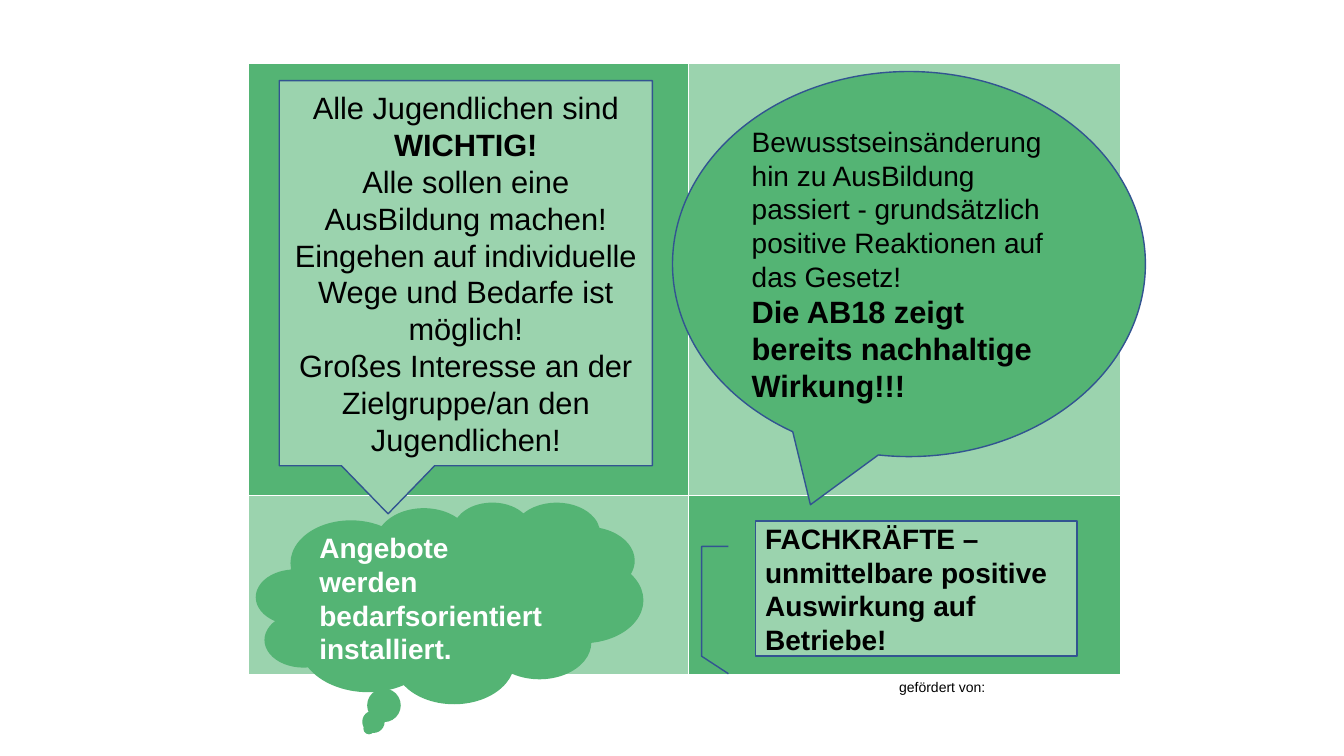
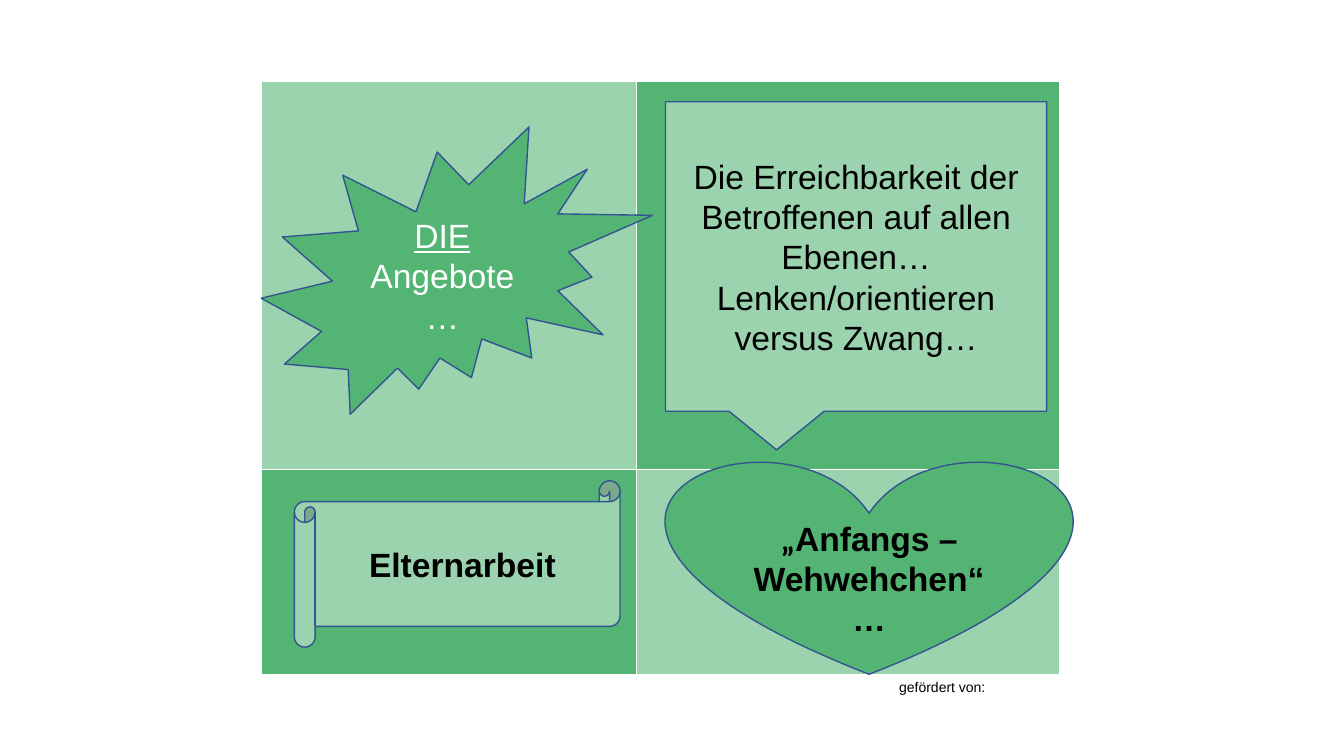
from pptx import Presentation
from pptx.dml.color import RGBColor
from pptx.enum.shapes import MSO_SHAPE
from pptx.enum.text import MSO_ANCHOR, PP_ALIGN
from pptx.util import Inches, Pt

GREEN = RGBColor(0x54, 0xB4, 0x74)
LIGHT = RGBColor(0x9B, 0xD3, 0xAE)
BLUE = RGBColor(0x32, 0x54, 0x91)
BLACK = RGBColor(0, 0, 0)
WHITE = RGBColor(0xFF, 0xFF, 0xFF)
FONT = "Arial"
LEFT, CENTER = PP_ALIGN.LEFT, PP_ALIGN.CENTER
MIDDLE = MSO_ANCHOR.MIDDLE
RECT_CALLOUT = MSO_SHAPE.RECTANGULAR_CALLOUT
OVAL_CALLOUT = MSO_SHAPE.OVAL_CALLOUT
CLOUD = MSO_SHAPE.CLOUD_CALLOUT
LINE_CALLOUT = MSO_SHAPE.LINE_CALLOUT_3
BURST = MSO_SHAPE.EXPLOSION2
SCROLL = MSO_SHAPE.HORIZONTAL_SCROLL
HEART = MSO_SHAPE.HEART


def add_run(p, text, size, color=BLACK, bold=False, underline=False, font=FONT):
    """Append one formatted run to a paragraph."""
    r = p.add_run()
    r.text = text
    r.font.name = font
    r.font.size = Pt(size)
    r.font.bold = bold
    r.font.underline = underline
    r.font.color.rgb = color


def fill_text(tf, paragraphs, align):
    """Write paragraphs, each a list of (text, size, options) runs."""
    tf.word_wrap = True
    for i, runs in enumerate(paragraphs):
        p = tf.paragraphs[0] if i == 0 else tf.add_paragraph()
        p.alignment = align
        for text, size, options in runs:
            add_run(p, text, size, **options)


def add_bubble(slide, kind, box, fill, paragraphs, align=CENTER, line=BLUE):
    """Add a filled preset shape with middle-anchored text."""
    sp = slide.shapes.add_shape(kind, *map(Inches, box))
    sp.shadow.inherit = False
    sp.fill.solid()
    sp.fill.fore_color.rgb = fill
    if line is None:
        sp.line.fill.background()
    else:
        sp.line.color.rgb = line
        sp.line.width = Pt(1)
    sp.text_frame.vertical_anchor = MIDDLE
    fill_text(sp.text_frame, paragraphs, align)
    return sp


def add_checkerboard(slide, left, top, widths, heights, colors):
    """Add a two by two table with alternating cell fills."""
    table = slide.shapes.add_table(
        len(heights), len(widths), Inches(left), Inches(top),
        Inches(sum(widths)), Inches(sum(heights))).table
    table.first_row = False
    table.horz_banding = False
    for col, width in zip(table.columns, widths):
        col.width = Inches(width)
    for i, height in enumerate(heights):
        table.rows[i].height = Inches(height)
        for j in range(len(widths)):
            cell = table.cell(i, j)
            cell.fill.solid()
            cell.fill.fore_color.rgb = colors[(i + j) % 2]


def add_board_slide(prs, *board):
    """Add a slide with the funding note and a checkerboard."""
    slide = prs.slides.add_slide(prs.slide_layouts[6])
    note = slide.shapes.add_textbox(
        Inches(8.82), Inches(6.68), Inches(2.12), Inches(0.27))
    fill_text(note.text_frame, [[("gefördert von:", 10, {})]], LEFT)
    add_checkerboard(slide, *board)
    return slide


def build_impact(prs):
    """Build the slide on young people and effects."""
    slide = add_board_slide(
        prs, 2.46, 0.63, (4.37, 4.28), (4.29, 1.77), (GREEN, LIGHT))
    bold = {"bold": True}
    add_bubble(slide, RECT_CALLOUT, (2.77, 0.8, 3.7, 3.82), LIGHT, [
        [("Alle Jugendlichen sind ", 22, {}), ("WICHTIG!", 22, bold)],
        [("Alle sollen eine AusBildung machen!", 22, {})],
        [("Eingehen auf individuelle Wege und Bedarfe ist möglich!", 22, {})],
        [("Großes Interesse an der Zielgruppe/an den Jugendlichen!", 22, {})],
    ])
    add_bubble(slide, OVAL_CALLOUT, (6.67, 0.71, 4.69, 3.82), GREEN, [
        [("Bewusstseinsänderung hin zu AusBildung passiert - grundsätzlich "
          "positive Reaktionen auf das Gesetz!", 20, {})],
        [("Die AB18 zeigt bereits nachhaltige Wirkung!!!", 22, bold)],
    ], LEFT)
    add_bubble(slide, CLOUD, (2.54, 4.98, 3.84, 2), GREEN, [
        [("Angebote werden bedarfsorientiert installiert.", 20,
          {"bold": True, "color": WHITE})],
    ], LEFT, None)
    add_bubble(slide, LINE_CALLOUT, (7.49, 5.17, 3.19, 1.34), LIGHT, [
        [("FACHKRÄFTE – unmittelbare positive Auswirkung auf Betriebe!",
          20, bold)],
    ], LEFT)


def build_challenges(prs):
    """Build the slide on offers and early difficulties."""
    slide = add_board_slide(
        prs, 2.59, 0.81, (3.72, 4.2), (3.85, 2.03), (LIGHT, GREEN))
    bold = {"bold": True}
    add_bubble(slide, BURST, (2.59, 1.26, 3.88, 2.85), GREEN, [
        [("DIE ", 24, {"color": WHITE, "underline": True}),
         ("Angebote…", 24, {"color": WHITE})],
    ])
    add_bubble(slide, RECT_CALLOUT, (6.6, 1.01, 3.78, 3.07), LIGHT, [
        [("Die Erreichbarkeit der Betroffenen auf allen Ebenen…", 24, {})],
        [("Lenken/orientieren versus Zwang…", 24, {})],
    ])
    add_bubble(slide, SCROLL, (2.92, 4.77, 3.23, 1.65), LIGHT, [
        [("Elternarbeit", 24, bold)],
    ])
    heart = add_bubble(slide, HEART, (6.61, 4.56, 4.02, 2.13), GREEN, [
        [("„", 24, {"bold": True, "font": "Calibri"}),
         ("Anfangs – Wehwehchen“…", 24, bold)],
    ])
    heart.text_frame.margin_top = Inches(0.45)


def main():
    """Build and save the presentation."""
    prs = Presentation()
    prs.slide_width = Inches(13.33)
    prs.slide_height = Inches(7.5)
    build_impact(prs)
    build_challenges(prs)
    prs.save("out.pptx")


if __name__ == "__main__":
    main()
